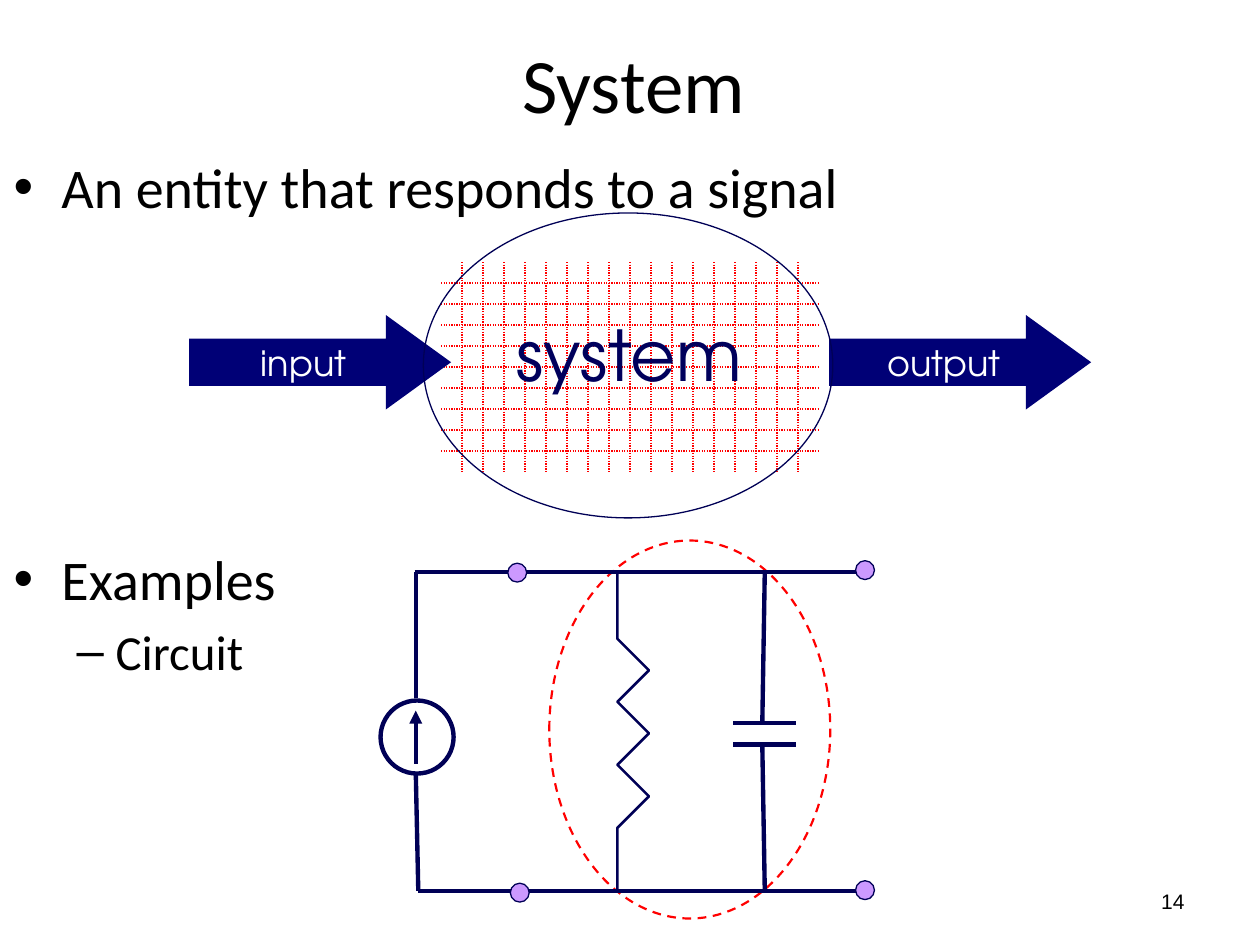
from pptx import Presentation
from pptx.dml.color import RGBColor
from pptx.enum.dml import MSO_LINE
from pptx.enum.shapes import MSO_CONNECTOR, MSO_SHAPE
from pptx.enum.text import MSO_ANCHOR, PP_ALIGN
from pptx.oxml.ns import qn
from pptx.util import Inches, Pt
from lxml import etree

STRAIGHT = MSO_CONNECTOR.STRAIGHT
OVAL, RIGHT_ARROW = MSO_SHAPE.OVAL, MSO_SHAPE.RIGHT_ARROW
LEFT, CENTER, RIGHT = PP_ALIGN.LEFT, PP_ALIGN.CENTER, PP_ALIGN.RIGHT
TOP, MIDDLE = MSO_ANCHOR.TOP, MSO_ANCHOR.MIDDLE
DASH, DOTTED = MSO_LINE.DASH, MSO_LINE.ROUND_DOT
NAVY, RED, LILAC = "000056", "FF0000", "CC99FF"
DISPLAY_FONT = "TeX Gyre Adventor"


def write_text(frame, text, size, font="Calibri", color="000000", align=LEFT,
               anchor=TOP, wrap=True, bullet=None, indent=0, hanging=0, before=0):
    frame.word_wrap = wrap
    frame.vertical_anchor = anchor
    paragraph = frame.paragraphs[0]
    if paragraph.runs:
        paragraph = frame.add_paragraph()
    paragraph.alignment = align
    paragraph.space_before = Pt(before)
    run = paragraph.add_run()
    run.text = text
    run.font.size = Pt(size)
    run.font.name = font
    run.font.color.rgb = RGBColor.from_string(color)
    if bullet:
        properties = paragraph._p.get_or_add_pPr()
        properties.set("marL", str(Inches(indent)))
        properties.set("indent", str(-Inches(hanging)))
        etree.SubElement(properties, qn("a:buFont")).set("typeface", "Arial")
        etree.SubElement(properties, qn("a:buChar")).set("char", bullet)


def style_line(shape, color, width, dash=None):
    shape.line.color.rgb = RGBColor.from_string(color)
    shape.line.width = Pt(width)
    if dash:
        shape.line.dash_style = dash
    etree.SubElement(shape._element.spPr, qn("a:effectLst"))


presentation = Presentation()
presentation.slide_width = Inches(10)
presentation.slide_height = Inches(7.5)
slide = presentation.slides.add_slide(presentation.slide_layouts[6])
shapes = slide.shapes

number = shapes.add_textbox(Inches(7.17), Inches(6.95), Inches(2.33), Inches(0.4))
write_text(number.text_frame, "14", 12, font="Arial", align=RIGHT, anchor=MIDDLE)

title = shapes.add_textbox(Inches(0.53), Inches(0.03), Inches(9), Inches(1.25))
write_text(title.text_frame, "System", 44, align=CENTER, anchor=MIDDLE)

definition = shapes.add_textbox(Inches(0.01), Inches(1.16), Inches(9), Inches(0.65))
write_text(definition.text_frame, "An entity that responds to a signal", 32,
           bullet="•", indent=0.38, hanging=0.38)

examples = shapes.add_textbox(Inches(0.01), Inches(4.27), Inches(2.9), Inches(1.2))
write_text(examples.text_frame, "Examples", 32, bullet="•", indent=0.38, hanging=0.38)
write_text(examples.text_frame, "Circuit", 28, bullet="–", indent=0.81, hanging=0.31,
           before=5.6)

grid_left, grid_top, grid_right, grid_bottom = 3.5, 2.08, 6.5, 3.75
grid_step = 1 / 6
grid_lines = []
for column in range(1, 18):
    x = grid_left + column * grid_step
    grid_lines.append((x, grid_top, x, grid_bottom))
for row in range(1, 10):
    y = grid_top + row * grid_step
    grid_lines.append((grid_left, y, grid_right, y))
for ends in grid_lines:
    grid_line = shapes.add_connector(STRAIGHT, *[Inches(value) for value in ends])
    style_line(grid_line, RED, 0.75, DOTTED)

system_label = shapes.add_textbox(Inches(4), Inches(2.42), Inches(2), Inches(0.77))
write_text(system_label.text_frame, "system", 40, font=DISPLAY_FONT, color="00005C")

for left, label in [(1.5, "input"), (6.58, "output")]:
    arrow = shapes.add_shape(RIGHT_ARROW, Inches(left), Inches(2.5), Inches(2.08), Inches(0.75))
    arrow.adjustments[0] = 0.5
    arrow.adjustments[1] = 0.69
    arrow.shadow.inherit = False
    arrow.fill.solid()
    arrow.fill.fore_color.rgb = RGBColor.from_string("000076")
    arrow.line.fill.background()
    write_text(arrow.text_frame, label, 20, font=DISPLAY_FONT, color="FFFFFF",
               align=CENTER, anchor=MIDDLE, wrap=False)

for left, top, width, height, color, weight, dash in [
    (3.36, 1.69, 3.25, 2.42, NAVY, 0.75, None),
    (4.36, 4.29, 2.23, 3, RED, 1.25, DASH),
    (3.02, 5.56, 0.58, 0.58, NAVY, 2.5, None),
]:
    outline = shapes.add_shape(OVAL, Inches(left), Inches(top), Inches(width), Inches(height))
    outline.fill.background()
    style_line(outline, color, weight, dash)

wire_top, wire_bottom = 4.54, 7.07
wires = [
    (3.3, wire_top, 3.3, 5.54),
    (3.3, 6.14, 3.32, wire_bottom),
    (5.82, 5.74, 6.32, 5.74),
    (5.82, 5.91, 6.32, 5.91),
    (6.07, wire_top, 6.05, 5.74),
    (6.05, 5.91, 6.07, wire_bottom),
]
for y, stops in [
    (wire_top, [3.29, 4.12, 4.87, 6.04, 6.79]),
    (wire_bottom, [3.32, 4.14, 4.87, 6.04, 6.79]),
]:
    wires += [(start, y, end, y) for start, end in zip(stops, stops[1:])]
for ends in wires:
    wire = shapes.add_connector(STRAIGHT, *[Inches(value) for value in ends])
    style_line(wire, NAVY, 2.5)

resistor_points = [(4.9 if turn % 2 == 0 else 5.15, 5.07 + turn * 0.25) for turn in range(7)]
resistor_points.append((4.9, wire_bottom))
builder = shapes.build_freeform(Inches(4.9), Inches(wire_top))
builder.add_line_segments([(Inches(x), Inches(y)) for x, y in resistor_points], close=False)
resistor = builder.convert_to_shape()
resistor.fill.background()
style_line(resistor, NAVY, 1.5)

current = shapes.add_connector(STRAIGHT, Inches(3.3), Inches(6.06), Inches(3.3), Inches(5.64))
style_line(current, NAVY, 2.5)
etree.SubElement(current.line._get_or_add_ln(), qn("a:tailEnd")).set("type", "triangle")

for left, top in [(4.03, 4.47), (4.05, 7.01), (6.79, 4.45), (6.79, 6.99)]:
    terminal = shapes.add_shape(OVAL, Inches(left), Inches(top), Inches(0.15), Inches(0.15))
    terminal.fill.solid()
    terminal.fill.fore_color.rgb = RGBColor.from_string(LILAC)
    style_line(terminal, NAVY, 0.75)

presentation.save("out.pptx")
